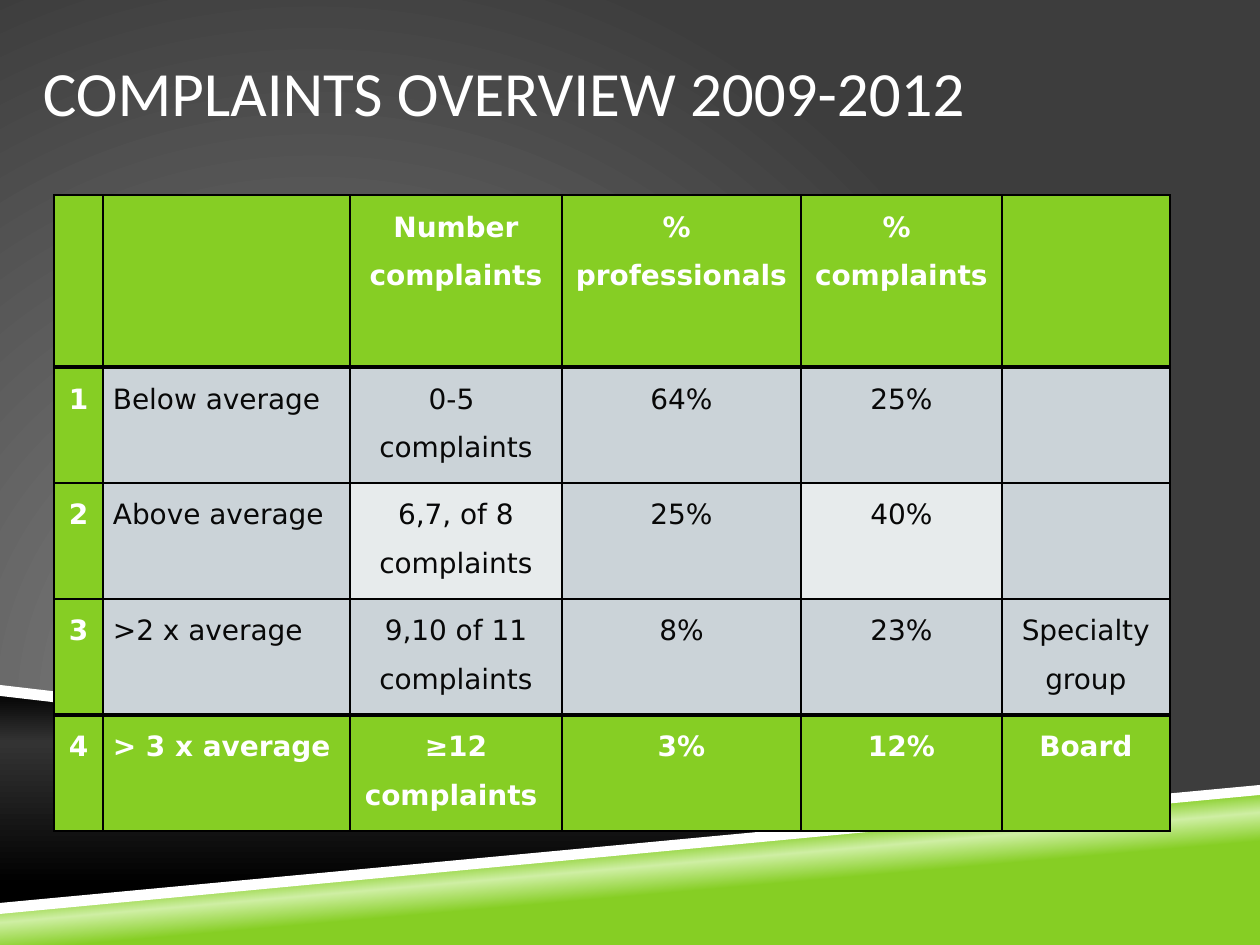
"""Build the complaints overview slide with its table."""
import pptx
import pptx.dml.color
import pptx.enum.text
import pptx.oxml
import pptx.oxml.ns
import pptx.util

PX = 914400 / 126
COLORS = {"green": "86CE24", "pale_green": "CFEFA4", "white": "FFFFFF", "black": "000000",
          "ink": "080808", "gray": "CBD3D8", "light_gray": "E7EBEC",
          "charcoal": "333333", "backdrop_light": "878787", "backdrop_dark": "3D3D3D"}
NAMESPACE = pptx.oxml.ns.nsdecls("a")


def color(name):
    return pptx.dml.color.RGBColor.from_string(COLORS[name])


def set_gradient(fill, parent, stops, direction):
    fill.gradient()
    old = parent.find(".//" + pptx.oxml.ns.qn("a:gradFill"))
    stop_list = "".join(
        f'<a:gs pos="{position * 1000}"><a:srgbClr val="{COLORS[name]}"/></a:gs>'
        for position, name in stops)
    old.getparent().replace(old, pptx.oxml.parse_xml(
        f'<a:gradFill {NAMESPACE} rotWithShape="1"><a:gsLst>{stop_list}</a:gsLst>{direction}</a:gradFill>'))


presentation = pptx.Presentation()
presentation.slide_width = round(1260 * PX)
presentation.slide_height = round(945 * PX)
slide = presentation.slides.add_slide(presentation.slide_layouts[6])
set_gradient(slide.background.fill, slide.element,
             [(0, "backdrop_light"), (100, "backdrop_dark")],
             '<a:path path="circle"><a:fillToRect l="50000" t="100000" r="100000" b="50000"/></a:path>')

bands = [
    ([(0, 690), (1026, 810), (0, 907)], [(0, "black"), (24, "charcoal"), (90, "black")], 90),
    ([(0, 908), (1260, 790), (1260, 945), (0, 945)],
     [(39, "green"), (50, "pale_green"), (58, "green")], 265),
    ([(0, 685), (0, 696), (1005, 813), (1057, 809)], None, None),
    ([(1260, 785), (0, 903), (0, 914), (1260, 795)], None, None),
]
for points, stops, angle in bands:
    builder = slide.shapes.build_freeform(*points[0], scale=PX)
    builder.add_line_segments(points[1:], close=True)
    shape = builder.convert_to_shape()
    shape.shadow.inherit = False
    shape.line.fill.background()
    if stops:
        set_gradient(shape.fill, shape.element, stops, f'<a:lin ang="{angle * 60000}" scaled="0"/>')
    else:
        shape.fill.solid()
        shape.fill.fore_color.rgb = color("white")

title = slide.shapes.add_textbox(*(round(length * PX) for length in (43, 24, 1159, 134)))
frame = title.text_frame
frame.word_wrap = True
frame.vertical_anchor = pptx.enum.text.MSO_ANCHOR.MIDDLE
frame.margin_left = frame.margin_right = 0
frame.text = "COMPLAINTS OVERVIEW 2009-2012"
title_font = frame.paragraphs[0].font
title_font.name = "Calibri"
title_font.size = pptx.util.Pt(36)
title_font.color.rgb = color("white")

rows = [
    ["", "", "Number complaints", "% \nprofessionals", "% \ncomplaints", ""],
    ["1", "Below average", "0-5 \ncomplaints", "64%", "25%", ""],
    ["2", "Above average", "6,7, of 8 complaints", "25%", "40%", ""],
    ["3", ">2 x average", "9,10 of 11 complaints", "8%", "23%", "Specialty group"],
    ["4", "> 3 x average", "≥12 complaints ", "3%", "12%", "Board"],
]
column_widths = [49, 247, 212, 239, 201, 168]
row_heights = [172, 116, 116, 116, 116]
light_cells = {(2, 2), (2, 4)}
thick_edges = {(0, "B"), (1, "T"), (3, "B"), (4, "T")}

table = slide.shapes.add_table(
    len(rows), len(column_widths), round(54 * PX), round(195 * PX),
    round(sum(column_widths) * PX), round(sum(row_heights) * PX)).table
for column, width in zip(table.columns, column_widths):
    column.width = round(width * PX)
for row, height in zip(table.rows, row_heights):
    row.height = round(height * PX)

for row_index, texts in enumerate(rows):
    for column_index, text in enumerate(texts):
        cell = table.cell(row_index, column_index)
        strong = row_index in (0, 4) or column_index == 0
        light = (row_index, column_index) in light_cells
        cell.margin_left = cell.margin_right = round(10 * PX)
        cell.margin_top = cell.margin_bottom = 0
        cell.text = text
        for paragraph in cell.text_frame.paragraphs:
            paragraph.line_spacing = 1.5
            paragraph.alignment = (pptx.enum.text.PP_ALIGN.LEFT if column_index == 1
                                   else pptx.enum.text.PP_ALIGN.CENTER)
            paragraph.font.name = "DejaVu Sans"
            paragraph.font.size = pptx.util.Pt(16)
            paragraph.font.bold = strong
            paragraph.font.color.rgb = color("white" if strong else "ink")
        properties = cell._tc.get_or_add_tcPr()
        for side in "LRTB":
            width = pptx.util.Pt(3 if (row_index, side) in thick_edges else 1)
            properties.append(pptx.oxml.parse_xml(
                f'<a:ln{side} {NAMESPACE} w="{width}"><a:solidFill>'
                f'<a:srgbClr val="{COLORS["black"]}"/></a:solidFill></a:ln{side}>'))
        cell.fill.solid()
        cell.fill.fore_color.rgb = color("green" if strong else "light_gray" if light else "gray")

presentation.save("out.pptx")
